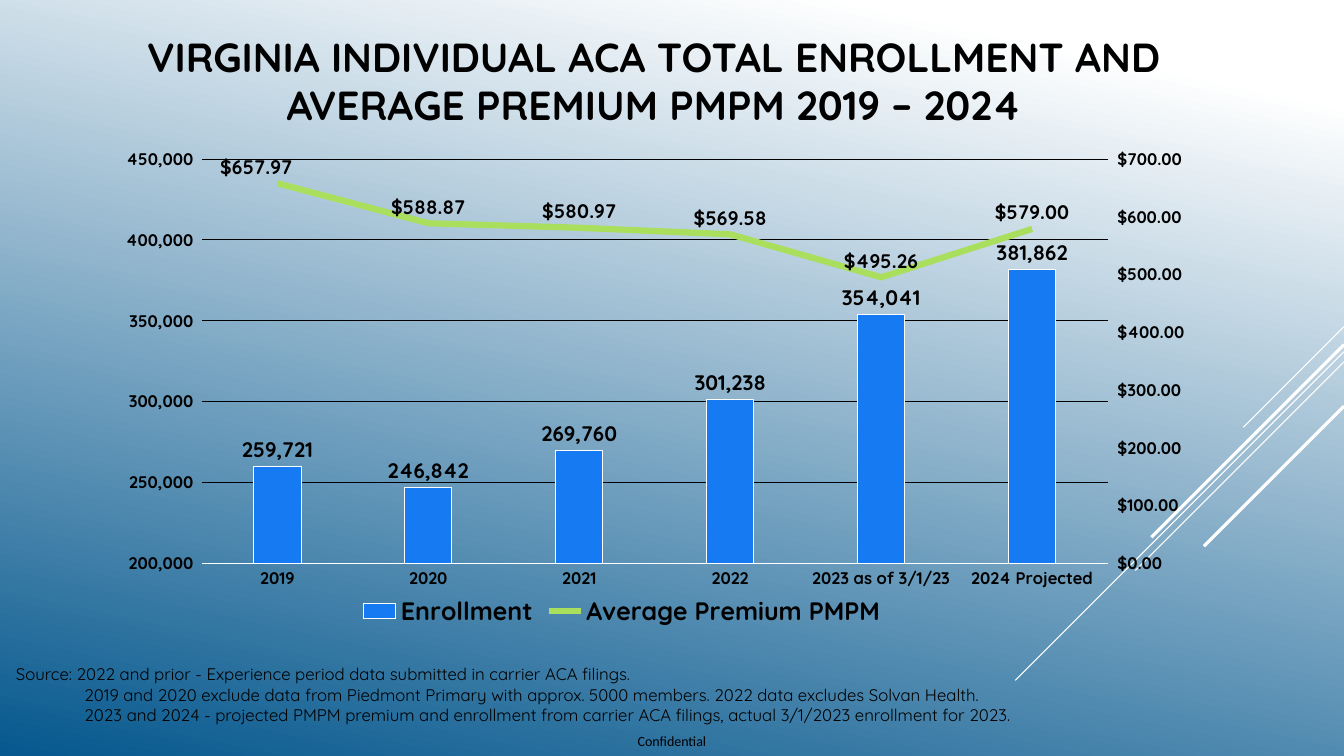
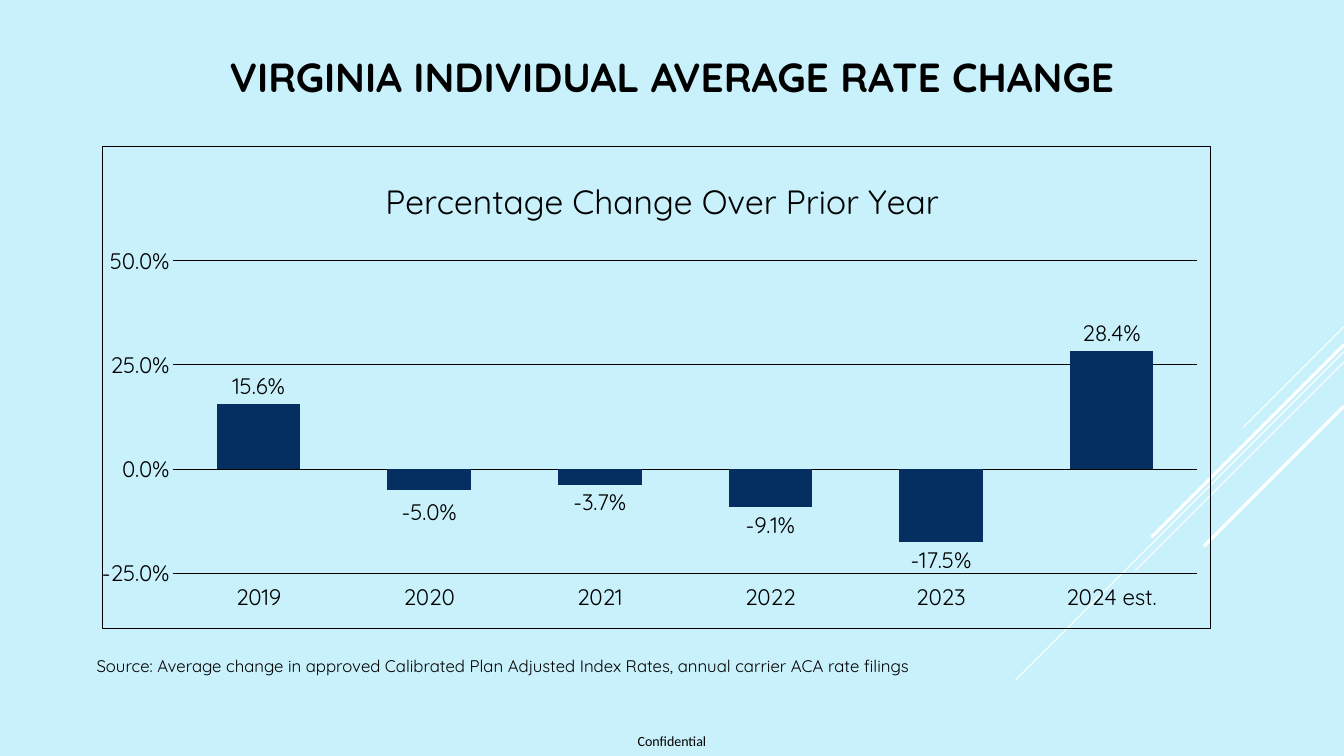
from copy import deepcopy
from dataclasses import dataclass, field

from lxml import etree
from pptx import Presentation
from pptx.chart.axis import CategoryAxis, ValueAxis
from pptx.chart.data import CategoryChartData
from pptx.dml.color import RGBColor
from pptx.enum.chart import (XL_CHART_TYPE, XL_LABEL_POSITION, XL_LEGEND_POSITION,
                             XL_MARKER_STYLE, XL_TICK_LABEL_POSITION, XL_TICK_MARK)
from pptx.enum.shapes import MSO_CONNECTOR
from pptx.enum.text import MSO_ANCHOR, PP_ALIGN
from pptx.oxml import parse_xml
from pptx.oxml.ns import nsdecls, qn
from pptx.util import Emu, Inches, Pt

COLORS = {"black": "000000", "white": "FFFFFF", "deep": "06588E", "sky": "C8F1FB",
          "blue": "167BF3", "green": "AADF5E", "navy": "052F61"}
FONT, FOOTER_FONT = "Quicksand", "Calibri"
WIDTH, HEIGHT = Inches(13.333), Inches(7.5)
THIN, THICK = 0.75, 2.25
CENTER, LEFT = PP_ALIGN.CENTER, PP_ALIGN.LEFT
MIDDLE, TOP = MSO_ANCHOR.MIDDLE, MSO_ANCHOR.TOP
NO_TICK = XL_TICK_MARK.NONE
LOW, HIGH = XL_TICK_LABEL_POSITION.LOW, XL_TICK_LABEL_POSITION.HIGH
ABOVE, OUTSIDE_END = XL_LABEL_POSITION.ABOVE, XL_LABEL_POSITION.OUTSIDE_END


@dataclass(frozen=True)
class Area:
    """Place on the slide, in percent of its width and height."""
    left: float
    top: float
    width: float
    height: float

    def emu(self) -> tuple:
        return (Emu(int(WIDTH * self.left / 100)), Emu(int(HEIGHT * self.top / 100)),
                Emu(int(WIDTH * self.width / 100)), Emu(int(HEIGHT * self.height / 100)))


@dataclass(frozen=True)
class Diagonal:
    """45-degree line from the right edge; top and drop in percent of the height."""
    top: float
    drop: float
    weight: float


@dataclass(frozen=True)
class TextStyle:
    size: float
    bold: bool = False
    font: str = FONT


@dataclass(frozen=True)
class Scale:
    minimum: float
    maximum: float
    step: float
    number_format: str


@dataclass(frozen=True)
class Labels:
    style: TextStyle
    number_format: str
    position: int
    nudges: dict = field(default_factory=dict)


DIAGONALS = (Diagonal(43.2, 13.33, THIN), Diagonal(46.53, 43.47, THIN),
             Diagonal(47.87, 27.6, THIN), Diagonal(45.6, 25.47, THICK),
             Diagonal(53.73, 18.53, THICK))
TITLE_STYLE, NOTE_STYLE = TextStyle(29, True), TextStyle(12)
FOOTER_STYLE = TextStyle(10, font=FOOTER_FONT)


def rgb(name: str) -> RGBColor:
    return RGBColor.from_string(COLORS[name])


def style_font(font, style: TextStyle) -> None:
    font.name, font.size, font.bold = style.font, Pt(style.size), style.bold
    font.color.rgb = rgb("black")


def style_line(line, color: str, weight: float) -> None:
    line.color.rgb = rgb(color)
    line.width = Pt(weight)


def add_text(slide, area: Area, paragraphs: list, style: TextStyle, align=LEFT,
             anchor=TOP, hanging: float = 0, inset: bool = True) -> None:
    """Each paragraph is a list of lines; paragraphs after the first are indented by hanging."""
    frame = slide.shapes.add_textbox(*area.emu()).text_frame
    frame.word_wrap, frame.vertical_anchor = True, anchor
    if not inset:
        frame.margin_left = frame.margin_right = frame.margin_top = frame.margin_bottom = 0
    for number, lines in enumerate(paragraphs):
        paragraph = frame.add_paragraph() if number else frame.paragraphs[0]
        paragraph.alignment = align
        if number and hanging:
            paragraph._p.get_or_add_pPr().set("marL", str(Inches(hanging)))
        for position, line in enumerate(lines):
            if position:
                paragraph.add_line_break()
            run = paragraph.add_run()
            run.text = line
            style_font(run.font, style)


def add_slide(presentation):
    """Blank slide with the shared diagonals and footer."""
    slide = presentation.slides.add_slide(presentation.slide_layouts[6])
    for diagonal in DIAGONALS:
        top, drop = (int(HEIGHT * share / 100) for share in (diagonal.top, diagonal.drop))
        line = slide.shapes.add_connector(MSO_CONNECTOR.STRAIGHT, WIDTH, top,
                                          WIDTH - drop, top + drop)
        style_line(line.line, "white", diagonal.weight)
        etree.SubElement(line._element.spPr, qn("a:effectLst"))
    add_text(slide, Area(46.28, 96.13, 7.43, 3.87), [["Confidential"]], FOOTER_STYLE,
             CENTER, MIDDLE, inset=False)
    return slide


def add_title(slide, area: Area, lines: list) -> None:
    add_text(slide, area, [lines], TITLE_STYLE, CENTER, MIDDLE)


def layout_element(x: float, y: float, size: tuple = (), edge: bool = True):
    """Manual chart layout, measured from the chart's edge or from the usual place."""
    values = []
    if size:
        values.append(("layoutTarget", "inner"))
    if edge:
        values += [("xMode", "edge"), ("yMode", "edge")]
    values += [("x", x), ("y", y), *zip("wh", size)]
    body = "".join(f'<c:{name} val="{value}"/>' for name, value in values)
    return parse_xml(f'<c:layout {nsdecls("c")}><c:manualLayout>{body}'
                     '</c:manualLayout></c:layout>')


def place(element, x: float, y: float, size: tuple = ()) -> None:
    for old in element.findall(qn("c:layout")):
        element.remove(old)
    layout = layout_element(x, y, size)
    overlay = element.find(qn("c:overlay"))
    if overlay is None:
        element.insert(0, layout)
    else:
        overlay.addprevious(layout)


def clear_background(chart, border: str = "") -> None:
    def properties(line: str):
        return parse_xml(f'<c:spPr {nsdecls("c", "a")}><a:noFill/>{line}</c:spPr>')

    no_line = "<a:ln><a:noFill/></a:ln>"
    outline = (f'<a:ln w="{Pt(THIN)}"><a:solidFill><a:srgbClr val="{COLORS[border]}"/>'
               "</a:solidFill></a:ln>") if border else no_line
    chart_element = chart._chartSpace.chart
    chart_element.addnext(properties(outline))
    chart_element.plotArea.append(properties(no_line))


def style_value_axis(axis, scale: Scale, style: TextStyle, grid: bool = True) -> None:
    axis.minimum_scale, axis.maximum_scale = scale.minimum, scale.maximum
    axis.major_unit = scale.step
    axis.major_tick_mark = axis.minor_tick_mark = NO_TICK
    axis.format.line.fill.background()
    axis.has_major_gridlines = grid
    if grid:
        style_line(axis.major_gridlines.format.line, "black", THIN)
    labels = axis.tick_labels
    labels.number_format, labels.number_format_is_linked = scale.number_format, False
    style_font(labels.font, style)


def add_labels(series, labels: Labels) -> None:
    data_labels = series.data_labels
    data_labels.show_value = True
    data_labels.number_format = labels.number_format
    data_labels.number_format_is_linked = False
    data_labels.position = labels.position
    style_font(data_labels.font, labels.style)
    container = data_labels._element
    shared = [child for child in container if child.tag != qn("c:showLeaderLines")]
    for number, (index, offset) in enumerate(labels.nudges.items()):
        label = parse_xml(f'<c:dLbl {nsdecls("c")}><c:idx val="{index}"/></c:dLbl>')
        label.append(layout_element(*offset, edge=False))
        label.extend([deepcopy(child) for child in shared])
        container.insert(number, label)


def add_column_chart(slide, area: Area, categories: list, series: dict, plot_area: tuple,
                     gap: int, scale: Scale, axis_style: TextStyle, axis_color: str):
    data = CategoryChartData()
    data.categories = categories
    for name, values in series.items():
        data.add_series(name, values)
    chart = slide.shapes.add_chart(XL_CHART_TYPE.COLUMN_CLUSTERED, *area.emu(), data).chart
    style_font(chart.font, axis_style)
    chart.has_legend = chart.has_title = False
    plot = chart.plots[0]
    plot.gap_width, plot.vary_by_categories = gap, False
    axis = chart.category_axis
    axis.major_tick_mark = axis.minor_tick_mark = NO_TICK
    style_line(axis.format.line, axis_color, THIN)
    style_font(axis.tick_labels.font, axis_style)
    style_value_axis(chart.value_axis, scale, axis_style)
    place(chart._chartSpace.chart.plotArea, *plot_area[:2], plot_area[2:])
    return chart


def fill_columns(series, color: str) -> None:
    series.invert_if_negative = False
    series.format.fill.solid()
    series.format.fill.fore_color.rgb = rgb(color)


def move_last_series_to_line(chart, scale: Scale, style: TextStyle):
    """Turn the last column series into a line on a right-hand axis and return it."""
    bars = chart.plots[0]._element
    moved = bars.findall(qn("c:ser"))[-1]
    for inverted in moved.findall(qn("c:invertIfNegative")):
        moved.remove(inverted)
    line_chart = parse_xml(
        f'<c:lineChart {nsdecls("c")}><c:grouping val="standard"/><c:varyColors val="0"/>'
        '<c:marker val="1"/><c:axId val="5001"/><c:axId val="5002"/></c:lineChart>')
    line_chart.insert(2, moved)
    bars.addnext(line_chart)
    category = deepcopy(chart.category_axis._element)
    value = deepcopy(chart.value_axis._element)
    for axis, own, other, crossing in ((category, "5001", "5002", "autoZero"),
                                       (value, "5002", "5001", "max")):
        axis.find(qn("c:axId")).set("val", own)
        cross_axis = axis.find(qn("c:crossAx"))
        cross_axis.set("val", other)
        for old in axis.findall(qn("c:crosses")):
            axis.remove(old)
        cross_axis.addnext(parse_xml(f'<c:crosses {nsdecls("c")} val="{crossing}"/>'))
    value.find(qn("c:axPos")).set("val", "r")
    chart.value_axis._element.addnext(value)
    value.addnext(category)
    CategoryAxis(category).visible = False
    right_axis = ValueAxis(value)
    style_value_axis(right_axis, scale, style, grid=False)
    right_axis.tick_label_position = HIGH
    return chart.plots[1].series[0]


def build_enrollment_slide(presentation) -> None:
    slide = add_slide(presentation)
    fill = slide.background.fill
    fill.gradient()
    fill.gradient_angle = 360 - 102
    for stop, position, color in zip(fill.gradient_stops, (0.1, 1), ("white", "deep")):
        stop.position, stop.color.rgb = position, rgb(color)
    axis_style = TextStyle(12, True)
    chart = add_column_chart(
        slide, Area(9.23, 18.4, 78.9, 66.27),
        ["2019", "2020", "2021", "2022", "2023 as of 3/1/23", "2024 Projected"],
        {"Enrollment": (259721, 246842, 269760, 301238, 354041, 381862),
         "Average Premium PMPM": (657.97, 588.87, 580.97, 569.58, 495.26, 579)},
        (0.074, 0.04, 0.86, 0.807), 219,
        Scale(200000, 450000, 50000, "#,##0_)"), axis_style, "white")
    premium = move_last_series_to_line(chart, Scale(0, 700, 100, '"$"#,##0.00'), axis_style)
    premium.smooth, premium.marker.style = False, XL_MARKER_STYLE.NONE
    style_line(premium.format.line, "green", 4.5)
    add_labels(premium, Labels(TextStyle(14, True), '"$"#,##0.00', ABOVE, {0: (-0.02, 0)}))
    enrollment = chart.plots[0].series[0]
    fill_columns(enrollment, "blue")
    style_line(enrollment.format.line, "white", THIN)
    add_labels(enrollment, Labels(TextStyle(15, True), "_(#,##0_)", OUTSIDE_END))
    chart.has_legend = True
    chart.legend.position = XL_LEGEND_POSITION.BOTTOM
    chart.legend.include_in_layout = False
    style_font(chart.legend.font, TextStyle(18, True))
    place(chart.legend._element, 0.22, 0.9)
    clear_background(chart)
    add_title(slide, Area(5.55, 4, 86.25, 13.2),
              ["VIRGINIA INDIVIDUAL ACA TOTAL ENROLLMENT AND",
               "AVERAGE PREMIUM PMPM 2019 – 2024"])
    add_text(slide, Area(0.45, 87.2, 99.08, 9.47), [
        ["Source: 2022 and prior - Experience period data submitted in carrier ACA filings."],
        ["2019 and 2020 exclude data from Piedmont Primary with approx. 5000 members. "
         "2022 data excludes Solvan Health."],
        ["2023 and 2024 - projected PMPM premium and enrollment from carrier ACA filings, "
         "actual 3/1/2023 enrollment for 2023."]], NOTE_STYLE, hanging=0.68)


def build_rate_slide(presentation) -> None:
    slide = add_slide(presentation)
    slide.background.fill.solid()
    slide.background.fill.fore_color.rgb = rgb("sky")
    style = TextStyle(16)
    chart = add_column_chart(
        slide, Area(7.58, 19.33, 82.5, 63.87),
        ["2019", "2020", "2021", "2022", "2023", "2024 est."],
        {"Series 1": (0.156, -0.05, -0.037, -0.091, -0.175, 0.284)},
        (0.064, 0.107, 0.924, 0.779), 104, Scale(-0.25, 0.65, 0.25, "0.0%"), style, "black")
    chart.category_axis.tick_label_position = LOW
    chart.plots[0].overlap = -62
    rate_change = chart.plots[0].series[0]
    fill_columns(rate_change, "navy")
    add_labels(rate_change, Labels(style, "0.0%", OUTSIDE_END, {1: (0, 0.01)}))
    chart.has_title = True
    run = chart.chart_title.text_frame.paragraphs[0].add_run()
    run.text = "Percentage Change Over Prior Year"
    style_font(run.font, TextStyle(24))
    place(chart.chart_title._element, 0.25, 0.05)
    clear_background(chart, "black")
    add_title(slide, Area(8.78, 3.33, 82.5, 13.47), ["VIRGINIA INDIVIDUAL AVERAGE RATE CHANGE"])
    add_text(slide, Area(6.45, 86.13, 79.05, 4), [
        ["Source: Average change in approved Calibrated Plan Adjusted Index Rates, "
         "annual carrier ACA rate filings"]], NOTE_STYLE)


def main() -> None:
    presentation = Presentation()
    presentation.slide_width, presentation.slide_height = WIDTH, HEIGHT
    build_enrollment_slide(presentation)
    build_rate_slide(presentation)
    presentation.save("out.pptx")


if __name__ == "__main__":
    main()
